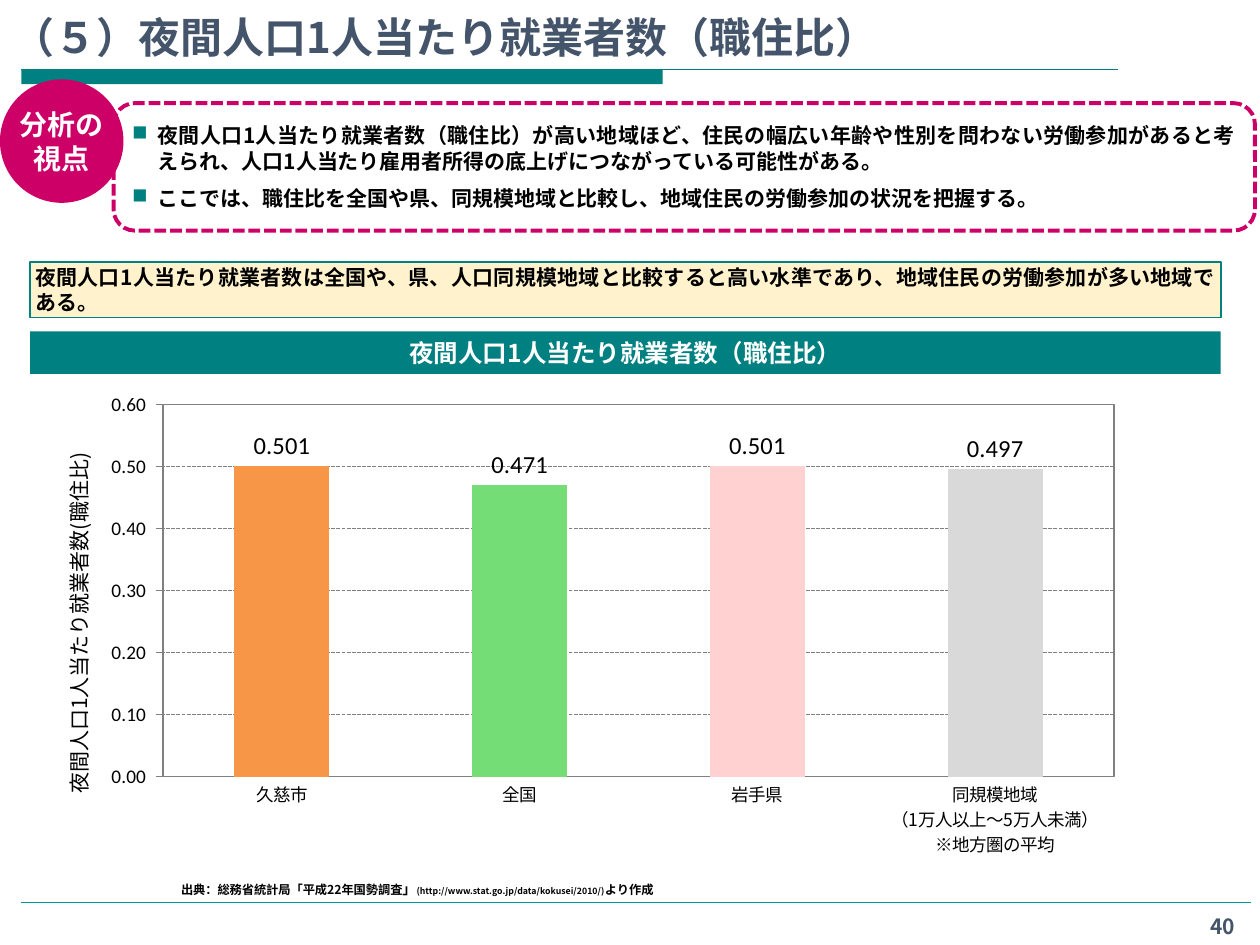
"""Build the slide on employed persons per head of night-time population."""
from lxml import etree
from pptx import Presentation
from pptx.chart.data import CategoryChartData
from pptx.dml.color import RGBColor
from pptx.enum.chart import XL_CHART_TYPE, XL_LABEL_POSITION, XL_TICK_MARK
from pptx.enum.dml import MSO_LINE
from pptx.enum.shapes import MSO_CONNECTOR, MSO_SHAPE
from pptx.enum.text import MSO_ANCHOR, PP_ALIGN
from pptx.oxml.ns import qn
from pptx.util import Cm, Pt

JP = "Noto Sans CJK JP"
COLORS = {
    "teal": "008080", "rule": "009999", "slate": "44546A", "magenta": "CC0066",
    "cream": "FFF2CC", "white": "FFFFFF", "black": "000000", "gray": "808080",
}
C = {name: RGBColor.from_string(value) for name, value in COLORS.items()}
HEADING = "夜間人口1人当たり就業者数（職住比）"


def style(font, size, color="black", bold=True, name=JP):
    font.size, font.bold, font.name = Pt(size), bold, name
    font.color.rgb = C[color]
    etree.SubElement(font._element, qn("a:ea")).set("typeface", name)


def place(parent, index, **values):
    for old in parent.findall(qn("c:layout")):
        parent.remove(old)
    layout = etree.Element(qn("c:layout"))
    manual = etree.SubElement(layout, qn("c:manualLayout"))
    for tag, value in values.items():
        etree.SubElement(manual, qn(f"c:{tag}")).set("val", str(value))
    parent.insert(index, layout)


prs = Presentation()
prs.slide_width, prs.slide_height = Cm(25.4), Cm(19.05)
s = prs.slides.add_slide(prs.slide_layouts[6])

for x1, x2, y, color in [(0.43, 22.53, 1.4, "teal"), (0.43, 25.22, 18.19, "rule")]:
    line = s.shapes.add_connector(MSO_CONNECTOR.STRAIGHT, Cm(x1), Cm(y), Cm(x2), Cm(y))
    line.line.color.rgb = C[color]
    line.line.width = Pt(0.75)
    etree.SubElement(line._element.spPr, qn("a:effectLst"))

data = CategoryChartData(number_format="0.000")
data.categories = ["久慈市", "全国", "岩手県", "同規模地域\n（1万人以上～5万人未満）\n※地方圏の平均"]
data.add_series("職住比", [0.501, 0.471, 0.501, 0.497])
chart = s.shapes.add_chart(
    XL_CHART_TYPE.COLUMN_CLUSTERED, Cm(0.46), Cm(7.72), Cm(22.45), Cm(10.26), data
).chart
chart.has_legend = chart.has_title = False
chart.font.size, chart.font.name = Pt(10), "Calibri"
plot = chart.plots[0]
plot.gap_width, plot.overlap, plot.vary_by_categories = 150, -25, False
for i, color in enumerate(["F79646", "75DD75", "FFD1D1", "D9D9D9"]):
    fill = plot.series[0].points[i].format.fill
    fill.solid()
    fill.fore_color.rgb = RGBColor.from_string(color)
plot.has_data_labels = True
labels = plot.data_labels
labels.show_value, labels.position = True, XL_LABEL_POSITION.OUTSIDE_END
labels.number_format, labels.number_format_is_linked = "0.000", False
style(labels.font, 14, bold=False, name="Calibri")

cat, val = chart.category_axis, chart.value_axis
cat.major_tick_mark, val.major_tick_mark = XL_TICK_MARK.NONE, XL_TICK_MARK.OUTSIDE
val.minimum_scale, val.maximum_scale, val.major_unit = 0, 0.6, 0.1
val.tick_labels.number_format = "0.00_ "
val.tick_labels.number_format_is_linked = False
style(cat.tick_labels.font, 10, bold=False)
style(val.tick_labels.font, 11, bold=False, name="Calibri")
val.has_major_gridlines = True
for part in (cat, val, val.major_gridlines):
    part.format.line.color.rgb = C["gray"]
    part.format.line.width = Pt(0.75)
val.major_gridlines.format.line.dash_style = MSO_LINE.SQUARE_DOT
tf = val.axis_title.text_frame
tf.text = "夜間人口1人当たり就業者数(職住比)"
style(tf.paragraphs[0].runs[0].font, 12, bold=False)
body = chart._chartSpace.xpath(".//c:valAx/c:title//a:bodyPr")[0]
body.set("rot", "-5400000")
body.set("vert", "horz")
place(chart._chartSpace.xpath(".//c:valAx/c:title")[0], 1,
      xMode="edge", yMode="edge", x=0.03, y=0.13)
area = chart._chartSpace.xpath(".//c:plotArea")[0]
place(area, 0, layoutTarget="inner", xMode="edge", yMode="edge",
      x=0.126, y=0.043, w=0.854, h=0.731)
border = etree.SubElement(etree.SubElement(area, qn("c:spPr")), qn("a:ln"), w="9525")
paint = etree.SubElement(border, qn("a:solidFill"))
etree.SubElement(paint, qn("a:srgbClr")).set("val", COLORS["gray"])

RECT, TOP, MID = MSO_SHAPE.RECTANGLE, MSO_ANCHOR.TOP, MSO_ANCHOR.MIDDLE
LEFT, CENTER, JUST = PP_ALIGN.LEFT, PP_ALIGN.CENTER, PP_ALIGN.JUSTIFY
POINTS = [
    "夜間人口1人当たり就業者数（職住比）が高い地域ほど、住民の幅広い年齢や性別を問わない労働参加があると考えられ、人口1人当たり雇用者所得の底上げにつながっている可能性がある。",
    "ここでは、職住比を全国や県、同規模地域と比較し、地域住民の労働参加の状況を把握する。",
]
SUMMARY = "夜間人口1人当たり就業者数は全国や、県、人口同規模地域と比較すると高い水準であり、地域住民の労働参加が多い地域である。"
BOXES = [
    (RECT, (0.43, 1.4, 12.93, 0.3), "teal", None, [], 12, "black", LEFT, TOP, 0.25),
    (None, (0, 0, 22.07, 1.37), None, None, ["（５）" + HEADING], 24, "slate", LEFT, MSO_ANCHOR.BOTTOM, 0.25),
    (RECT, (0.61, 5.28, 24, 1.12), "cream", ("teal", 1), [SUMMARY], 12, "black", JUST, MID, 0.1),
    (RECT, (0.61, 6.68, 24, 0.86), "teal", None, [HEADING], 14, "white", CENTER, TOP, 0.25),
    (None, (23.9, 18.29, 1.5, 0.71), None, None, ["40"], 12, "slate", CENTER, TOP, 0.25),
    (MSO_SHAPE.ROUNDED_RECTANGLE, (2.29, 2.08, 23.01, 2.57), None, ("magenta", 2.25), POINTS, 12, "black", JUST, MID, 0.25),
    (MSO_SHAPE.OVAL, (0, 1.6, 2.49, 2.49), "magenta", None, ["分析の\v視点"], 16, "white", CENTER, MID, 0.1),
]
for shape, box, fill, line, texts, size, color, align, anchor, inset in BOXES:
    box = [Cm(v) for v in box]
    if shape is None:
        sp = s.shapes.add_textbox(*box)
    else:
        sp = s.shapes.add_shape(shape, *box)
        sp.shadow.inherit = False
    if fill:
        sp.fill.solid()
        sp.fill.fore_color.rgb = C[fill]
    else:
        sp.fill.background()
    if line:
        sp.line.color.rgb, sp.line.width = C[line[0]], Pt(line[1])
    else:
        sp.line.fill.background()
    tf = sp.text_frame
    tf.word_wrap = shape != MSO_SHAPE.OVAL
    tf.vertical_anchor = anchor
    tf.margin_left = tf.margin_right = Cm(inset)
    if shape == MSO_SHAPE.ROUNDED_RECTANGLE:
        sp.line.dash_style = MSO_LINE.SQUARE_DOT
    for i, text in enumerate(texts):
        p = tf.add_paragraph() if i else tf.paragraphs[0]
        p.text, p.alignment = text, align
        for r in p.runs:
            style(r.font, size, color)
        if len(texts) > 1:
            p.space_before, p.space_after = Pt(3 if i else 0), Pt(4)
            pPr = p._p.get_or_add_pPr()
            pPr.set("marL", str(Cm(0.51)))
            pPr.set("indent", str(-Cm(0.51)))
            bullet = etree.SubElement(pPr, qn("a:buClr"))
            etree.SubElement(bullet, qn("a:srgbClr")).set("val", COLORS["teal"])
            etree.SubElement(pPr, qn("a:buChar")).set("char", "■")

tf = s.shapes.add_textbox(Cm(3.4), Cm(17.63), Cm(16.03), Cm(0.61)).text_frame
tf.word_wrap = True
for text, size in [("出典：総務省統計局「平成22年国勢調査", 7), ("」", 8),
                   ("(http://www.stat.go.jp/data/kokusei/2010/)", 5), ("より作成", 7)]:
    r = tf.paragraphs[0].add_run()
    r.text = text
    style(r.font, size)

prs.save("out.pptx")
